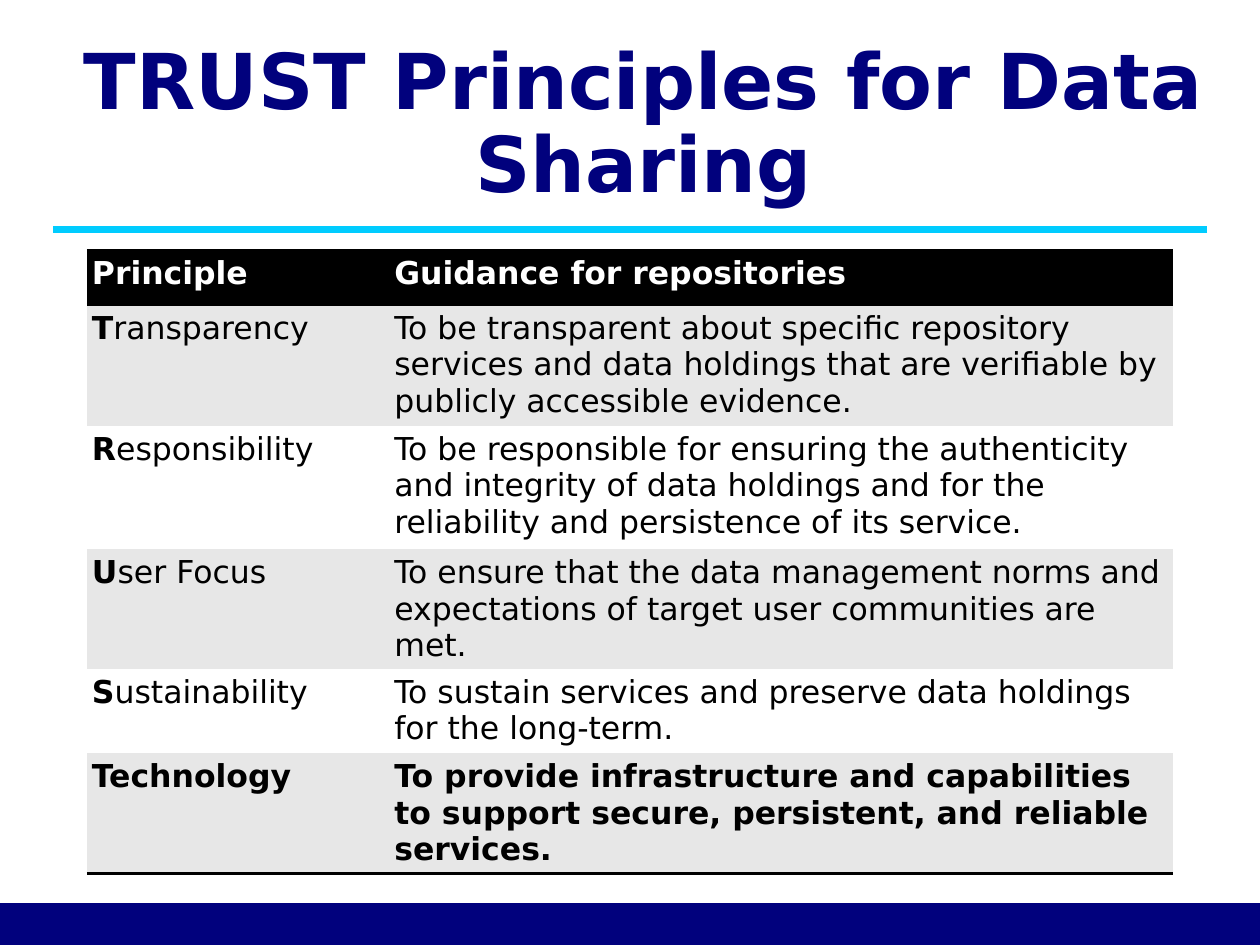
"""Build a slide with a table of the TRUST principles for data sharing."""
from lxml.etree import SubElement
from pptx import Presentation
from pptx.dml.color import RGBColor
from pptx.enum.shapes import MSO_CONNECTOR, MSO_SHAPE
from pptx.enum.text import MSO_ANCHOR, MSO_AUTO_SIZE, PP_ALIGN
from pptx.oxml import parse_xml
from pptx.oxml.ns import nsdecls, qn
from pptx.util import Inches, Pt

TITLE = "TRUST Principles for Data Sharing"
HEADER = ("Principle", "Guidance for repositories")
PRINCIPLES = [
    ("Transparency", "To be transparent about specific repository services and data holdings "
                     "that are verifiable by publicly accessible evidence."),
    ("Responsibility", "To be responsible for ensuring the authenticity and integrity of data "
                       "holdings and for the reliability and persistence of its service."),
    ("User Focus", "To ensure that the data management norms and expectations of target user "
                   "communities are met."),
    ("Sustainability", "To sustain services and preserve data holdings for the long-term."),
    ("Technology", "To provide infrastructure and capabilities to support secure, persistent, "
                   "and reliable services."),
]
COLORS = {"navy": "01017D", "cyan": "00CCFF", "black": "000000", "white": "FFFFFF", "band": "E7E7E7"}
FONT = "DejaVu Sans"
PLAIN_TABLE_STYLE = "{2D5ABB26-0587-4C30-8999-92F81FD0307C}"
WIDTH, HEIGHT = Inches(10), Inches(7.5)
COLUMN_WIDTHS = (2.4, 6.22)
ROW_HEIGHTS = (0.43, 0.96, 0.98, 0.95, 0.67, 0.95)
TABLE_LEFT, TABLE_TOP = 0.69, 1.99
RULE_MARGIN, RULE_TOP = 0.42, 1.82
FOOTER_HEIGHT = 0.33
CELL_FORMAT = dict.fromkeys(
    ("margin_left", "margin_right", "margin_top", "margin_bottom"), Inches(0.04))
TITLE_FORMAT = {"left": Inches(0.5), "top": Inches(0.16),
                "width": Inches(9.22), "height": Inches(1.68)}
TITLE_FRAME_FORMAT = {"word_wrap": True, "auto_size": MSO_AUTO_SIZE.NONE,
                      "vertical_anchor": MSO_ANCHOR.MIDDLE}


def rgb(name):
    return RGBColor.from_string(COLORS[name])


def set_all(target, values):
    for name, value in values.items():
        setattr(target, name, value)


def add_span(para, text, size, color, bold):
    span = para.add_run()
    span.text = text
    set_all(span.font, {"name": FONT, "size": Pt(size), "bold": bold})
    span.font.color.rgb = rgb(color)


def add_borders(cell, sides):
    properties = cell._tc.get_or_add_tcPr()
    for index, side in enumerate(sides):
        properties.insert(index, parse_xml(
            f'<a:ln{side} {nsdecls("a")} w="{Pt(2)}"><a:solidFill>'
            f'<a:srgbClr val="{COLORS["black"]}"/></a:solidFill></a:ln{side}>'))


def add_title(page):
    title = page.shapes.title
    set_all(title, TITLE_FORMAT)
    set_all(title.text_frame, TITLE_FRAME_FORMAT)
    para = title.text_frame.paragraphs[0]
    set_all(para, {"alignment": PP_ALIGN.CENTER, "line_spacing": 0.9})
    add_span(para, TITLE, 44, "navy", True)


def add_principles(page):
    rows = [HEADER, *PRINCIPLES]
    last = len(rows) - 1
    frame = page.shapes.add_table(
        len(rows), len(HEADER), Inches(TABLE_LEFT), Inches(TABLE_TOP),
        Inches(sum(COLUMN_WIDTHS)), Inches(sum(ROW_HEIGHTS)))
    table = frame.table
    set_all(table, {"first_row": True, "horz_banding": False})
    table._tbl.tblPr.find(qn("a:tableStyleId")).text = PLAIN_TABLE_STYLE
    for column, width in zip(table.columns, COLUMN_WIDTHS):
        column.width = Inches(width)
    for row, height in zip(table.rows, ROW_HEIGHTS):
        row.height = Inches(height)
    for row_index, texts in enumerate(rows):
        fill = "black" if row_index == 0 else ("white", "band")[row_index % 2]
        color = "white" if row_index == 0 else "black"
        bold = row_index in (0, last)
        for column_index, text in enumerate(texts):
            cell = table.cell(row_index, column_index)
            set_all(cell, CELL_FORMAT)
            cell.fill.solid()
            cell.fill.fore_color.rgb = rgb(fill)
            add_borders(cell, {0: "TB", last: "B"}.get(row_index, ""))
            para = cell.text_frame.paragraphs[0]
            if column_index == 0 and not bold:
                add_span(para, text[0], 18, color, True)
                text = text[1:]
            add_span(para, text, 18, color, bold)


def add_rule(page):
    top = Inches(RULE_TOP)
    rule = page.shapes.add_connector(
        MSO_CONNECTOR.STRAIGHT, WIDTH - Inches(RULE_MARGIN), top, Inches(RULE_MARGIN), top)
    rule.line.color.rgb = rgb("cyan")
    rule.line.width = Pt(4)
    SubElement(rule._element.spPr, qn("a:effectLst"))


def add_footer(page):
    height = Inches(FOOTER_HEIGHT)
    footer = page.shapes.add_shape(MSO_SHAPE.RECTANGLE, 0, HEIGHT - height, WIDTH, height)
    footer.shadow.inherit = False
    footer.fill.solid()
    footer.fill.fore_color.rgb = rgb("navy")
    footer.line.color.rgb = rgb("navy")
    footer.line.width = Pt(1)


def main():
    deck = Presentation()
    set_all(deck, {"slide_width": WIDTH, "slide_height": HEIGHT})
    page = deck.slides.add_slide(deck.slide_layouts[5])
    for add_part in (add_title, add_principles, add_rule, add_footer):
        add_part(page)
    deck.save("out.pptx")


if __name__ == "__main__":
    main()
